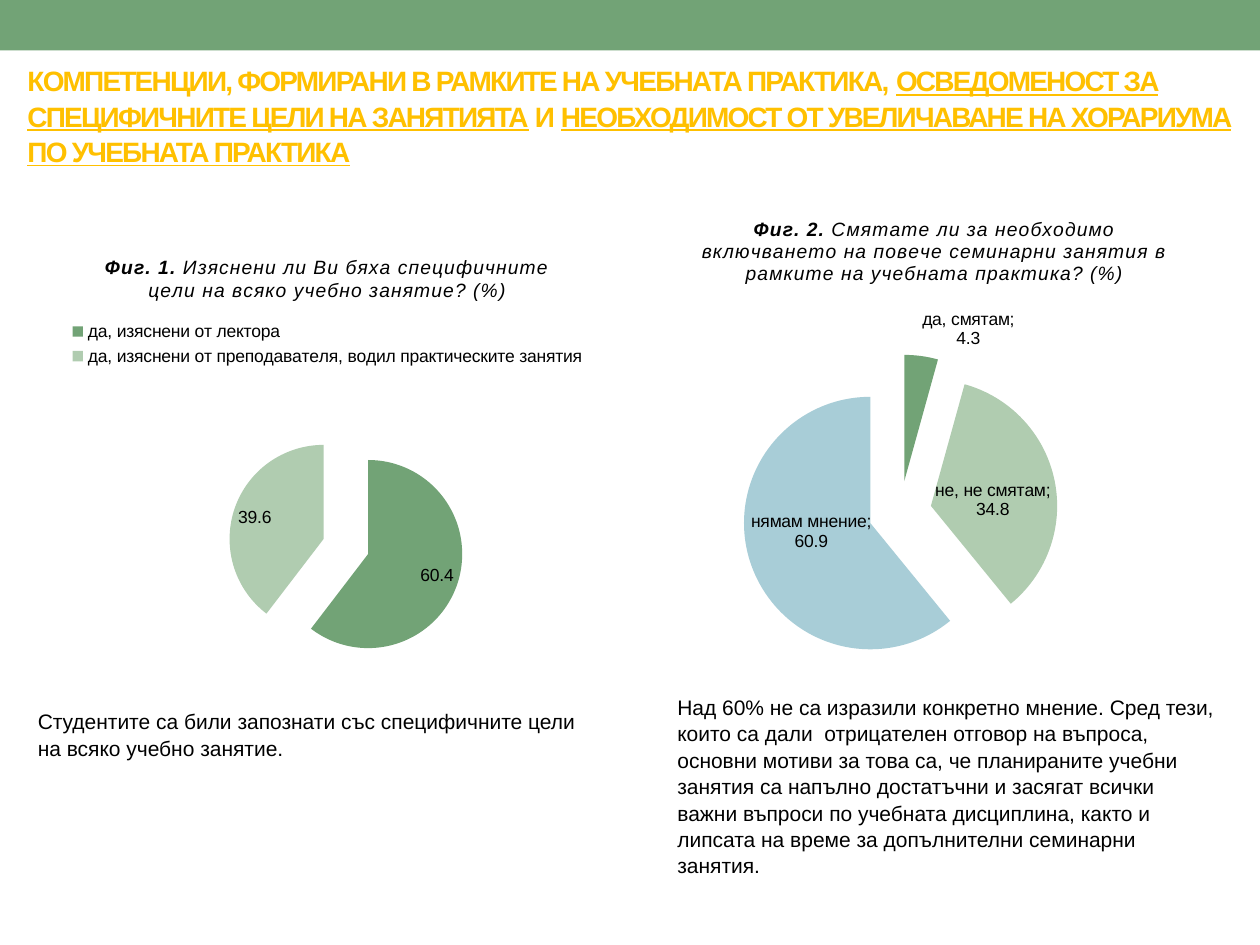
from dataclasses import dataclass

from lxml.etree import SubElement
from pptx import Presentation
from pptx.chart.data import CategoryChartData
from pptx.dml.color import RGBColor
from pptx.enum.chart import XL_CHART_TYPE, XL_LABEL_POSITION, XL_LEGEND_POSITION
from pptx.enum.shapes import MSO_SHAPE
from pptx.enum.text import MSO_ANCHOR, MSO_AUTO_SIZE, PP_ALIGN
from pptx.oxml import parse_xml
from pptx.oxml.ns import nsdecls, qn
from pptx.util import Pt


@dataclass(frozen=True)
class Theme:
    font: str = "Arial"
    green: str = "72A376"
    pale_green: str = "B0CCB0"
    blue: str = "A8CDD7"
    gold: str = "FFC000"
    ink: str = "000000"
    heading_size: int = 16
    note_size: int = 12
    caption_size: int = 11
    label_size: int = 10


def add_text(paragraph, text, *, font, size, color, bold=False, italic=False,
             underline=False, spacing=0):
    """Append a formatted run; spacing is the letter spacing in points."""
    run = paragraph.add_run()
    run.text = text
    style = run.font
    style.name, style.size = font, Pt(size)
    style.bold, style.italic, style.underline = bold, italic, underline
    style.color.rgb = RGBColor.from_string(color)
    if spacing:
        run._r.get_or_add_rPr().set("spc", str(int(spacing * 100)))


class SlideBuilder:
    def __init__(self, slide, theme):
        self.slide = slide
        self.theme = theme

    def bar(self, left, top, width, height):
        band = self.slide.shapes.add_shape(
            MSO_SHAPE.RECTANGLE, Pt(left), Pt(top), Pt(width), Pt(height))
        band.shadow.inherit = False
        band.fill.solid()
        band.fill.fore_color.rgb = RGBColor.from_string(self.theme.green)
        band.line.fill.background()

    def heading(self, parts, left, top, width, height):
        """Fill the title placeholder from (text, underlined) pairs."""
        heading = self.slide.shapes.title
        heading.left, heading.top = Pt(left), Pt(top)
        heading.width, heading.height = Pt(width), Pt(height)
        frame = heading.text_frame
        frame.word_wrap = True
        frame.auto_size = MSO_AUTO_SIZE.NONE
        frame.vertical_anchor = MSO_ANCHOR.MIDDLE
        paragraph = frame.paragraphs[0]
        paragraph.alignment = PP_ALIGN.LEFT
        paragraph.line_spacing = 1.05
        for text, underlined in parts:
            add_text(paragraph, text, font=self.theme.font, size=self.theme.heading_size,
                     color=self.theme.gold, bold=True, underline=underlined, spacing=-1)

    def note(self, text, left, top, width, height, line_spacing=1.05):
        box = self.slide.shapes.add_textbox(Pt(left), Pt(top), Pt(width), Pt(height))
        frame = box.text_frame
        frame.word_wrap = True
        frame.auto_size = MSO_AUTO_SIZE.SHAPE_TO_FIT_TEXT
        paragraph = frame.paragraphs[0]
        paragraph.line_spacing = line_spacing
        add_text(paragraph, text, font=self.theme.font, size=self.theme.note_size,
                 color=self.theme.ink)

    def pie(self, number, question, answers, left, top, width, height,
            legend=False, plot_area=None):
        """Draw an exploded pie; without a legend the labels name the answers."""
        theme = self.theme
        data = CategoryChartData(number_format="0.0")
        data.categories = list(answers)
        data.add_series("Series 1", list(answers.values()))
        chart = self.slide.shapes.add_chart(
            XL_CHART_TYPE.PIE, Pt(left), Pt(top), Pt(width), Pt(height), data).chart
        chart.font.name, chart.font.size = theme.font, Pt(theme.label_size)
        chart.font.color.rgb = RGBColor.from_string(theme.ink)

        chart.has_title = True
        caption = chart.chart_title.text_frame.paragraphs[0]
        for text, bold in ((f"Фиг. {number}.", True), (f" {question}", False)):
            add_text(caption, text, font=theme.font, size=theme.caption_size,
                     color=theme.ink, bold=bold, italic=True, spacing=0.5)

        chart.has_legend = legend
        if legend:
            chart.legend.position = XL_LEGEND_POSITION.TOP
            chart.legend.include_in_layout = False

        plot = chart.plots[0]
        plot.vary_by_categories = True
        series = plot.series[0]
        slice_colors = (theme.green, theme.pale_green, theme.blue)
        for index, color in zip(range(len(answers)), slice_colors):
            fill = series.points[index].format.fill
            fill.solid()
            fill.fore_color.rgb = RGBColor.from_string(color)
        series._element.find(qn("c:dPt")).addprevious(
            parse_xml(f'<c:explosion {nsdecls("c")} val="25"/>'))

        labels = series.data_labels
        labels.show_value = True
        labels.show_category_name = not legend
        labels.number_format, labels.number_format_is_linked = "0.0", False
        labels.position = XL_LABEL_POSITION.BEST_FIT
        labels._element.find(qn("c:showBubbleSize")).addnext(
            parse_xml(f'<c:separator {nsdecls("c")}>; </c:separator>'))
        if plot_area:
            self.place_plot(chart, plot_area)

    @staticmethod
    def place_plot(chart, fractions):
        """Fix the inner plot area as x, y, w, h fractions of the chart."""
        area = chart._chartSpace.chart.plotArea
        for automatic in area.findall(qn("c:layout")):
            area.remove(automatic)
        layout = parse_xml(f'<c:layout {nsdecls("c")}><c:manualLayout/></c:layout>')
        settings = [("layoutTarget", "inner"), ("xMode", "edge"), ("yMode", "edge")]
        settings += zip("xywh", fractions)
        for name, value in settings:
            SubElement(layout[0], qn(f"c:{name}")).set("val", str(value))
        area.insert(0, layout)


def main():
    deck = Presentation()
    deck.slide_width, deck.slide_height = Pt(720), Pt(540)
    title_only = deck.slide_layouts[5]
    page = SlideBuilder(deck.slides.add_slide(title_only), Theme())

    page.bar(0, 0, 720, 28.8)
    page.heading([
        ("КОМПЕТЕНЦИИ, ФОРМИРАНИ В РАМКИТЕ НА УЧЕБНАТА ПРАКТИКА, ", False),
        ("ОСВЕДОМЕНОСТ ЗА СПЕЦИФИЧНИТЕ ЦЕЛИ НА ЗАНЯТИЯТА", True),
        (" И ", False),
        ("НЕОБХОДИМОСТ ОТ УВЕЛИЧАВАНЕ НА ХОРАРИУМА ПО УЧЕБНАТА ПРАКТИКА", True),
    ], 8.5, 32, 703, 67.5)

    page.pie(1, "Изяснени ли Ви бяха специфичните цели на всяко учебно занятие? (%)",
             {"да, изяснени от лектора": 60.4,
              "да, изяснени от преподавателя, водил практическите занятия": 39.6},
             8.5, 134, 357, 258.5, legend=True, plot_area=(0.09, 0.43, 0.88, 0.52))
    page.note("Студентите са били запознати със специфичните цели на всяко учебно занятие.",
              14.5, 400, 329, 36, line_spacing=1.08)
    page.note("Над 60% не са изразили конкретно мнение. Сред тези, които са дали  отрицателен "
              "отговор на въпроса, основни мотиви за това са, че планираните учебни занятия "
              "са напълно достатъчни и засягат всички важни въпроси по учебната дисциплина, "
              "както и липсата на време за допълнителни семинарни занятия.",
              380, 392.5, 323.5, 109)
    page.pie(2, "Смятате ли за необходимо включването на повече семинарни занятия "
                "в рамките на учебната практика? (%)",
             {"да, смятам": 4.3, "не, не смятам": 34.8, "нямам мнение": 60.9},
             354, 111.5, 360, 281.5)

    deck.save("out.pptx")


if __name__ == "__main__":
    main()
